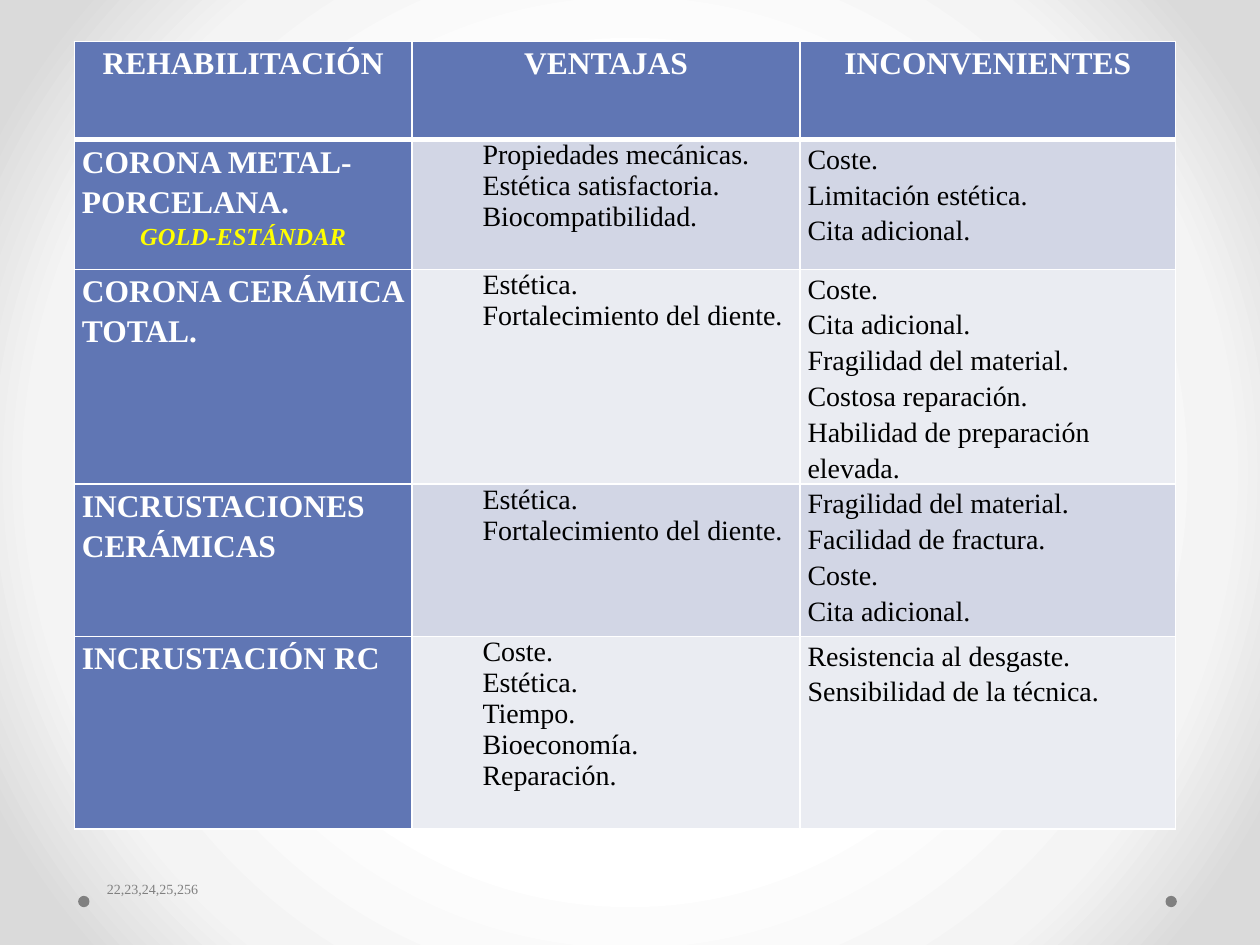
from lxml.etree import SubElement
from pptx import Presentation
from pptx.dml.color import RGBColor
from pptx.enum.shapes import MSO_SHAPE
from pptx.enum.text import PP_ALIGN
from pptx.oxml import parse_xml
from pptx.oxml.ns import nsdecls, qn
from pptx.util import Inches, Pt

FONT = "Times New Roman"
BLUE = RGBColor(0x60, 0x76, 0xB4)
BAND_DARK = RGBColor(0xD2, 0xD6, 0xE5)
BAND_LIGHT = RGBColor(0xEA, 0xEC, 0xF2)
WHITE = RGBColor(0xFF, 0xFF, 0xFF)
BLACK = RGBColor(0, 0, 0)
YELLOW = RGBColor(0xFF, 0xFF, 0)
GRAY = RGBColor(0x80, 0x80, 0x80)
BACKGROUND_STOPS = [(50, WHITE), (76, RGBColor(0xF4, 0xF4, 0xF4)),
                    (92, RGBColor(0xDA, 0xDA, 0xDA))]

WIDTH, HEIGHT = Inches(10), Inches(7.5)
COLUMN_SHARES = [2.68, 3.08, 2.98]
ROW_SHARES = [0.78, 1.03, 1.7, 1.21, 1.53]

HEADERS = ["REHABILITACIÓN", "VENTAJAS", "INCONVENIENTES"]
GOLD = "GOLD-ESTÁNDAR"
TREATMENTS = [
    (["CORONA METAL-PORCELANA.", GOLD],
     ["Propiedades mecánicas.", "Estética satisfactoria.", "Biocompatibilidad."],
     ["Coste.", "Limitación estética.", "Cita adicional."]),
    (["CORONA CERÁMICA TOTAL."],
     ["Estética.", "Fortalecimiento del diente."],
     ["Coste.", "Cita adicional.", "Fragilidad del material.",
      "Costosa reparación.", "Habilidad de preparación elevada."]),
    (["INCRUSTACIONES CERÁMICAS"],
     ["Estética.", "Fortalecimiento del diente."],
     ["Fragilidad del material.", "Facilidad de fractura.", "Coste.",
      "Cita adicional."]),
    (["INCRUSTACIÓN RC"],
     ["Coste.", "Estética.", "Tiempo.", "Bioeconomía.", "Reparación."],
     ["Resistencia al desgaste.", "Sensibilidad de la técnica."]),
]


def share_box(x, y, w, h):
    """Turn shares of the slide into lengths."""
    return int(WIDTH * x), int(HEIGHT * y), int(WIDTH * w), int(HEIGHT * h)


def add_run(p, text, size, color, bold=False, italic=False):
    r = p.add_run()
    r.text = text
    r.font.name, r.font.size = FONT, Pt(size)
    r.font.bold, r.font.italic = bold, italic
    r.font.color.rgb = color


def set_background(s):
    stops = "".join(f'<a:gs pos="{pos * 1000}"><a:srgbClr val="{color}"/></a:gs>'
                    for pos, color in BACKGROUND_STOPS)
    fill = s.background.fill
    fill.gradient()
    old = s.element.find(".//" + qn("a:gradFill"))
    old.getparent().replace(old, parse_xml(
        f'<a:gradFill {nsdecls("a")} rotWithShape="1"><a:gsLst>{stops}</a:gsLst>'
        '<a:path path="circle"><a:fillToRect l="50000" t="50000" r="50000" '
        'b="50000"/></a:path></a:gradFill>'))


def set_borders(cell, top, bottom):
    tcPr = cell._tc.get_or_add_tcPr()
    for side, width in (("L", 1), ("R", 1), ("T", top), ("B", bottom)):
        ln = SubElement(tcPr, qn(f"a:ln{side}"), w=str(Pt(width)))
        color = SubElement(SubElement(ln, qn("a:solidFill")), qn("a:srgbClr"))
        color.set("val", str(WHITE))


def fill_cell(cell, lines, row, column):
    # Borders and fill
    set_borders(cell, 3 if row == 1 else 1, 3 if row == 0 else 1)
    heading = row == 0 or column == 0
    cell.fill.solid()
    cell.fill.fore_color.rgb = BLUE if heading else (BAND_DARK if row % 2 else BAND_LIGHT)
    cell.margin_left = cell.margin_right = Inches(0.06)
    cell.margin_top = cell.margin_bottom = 0

    # One paragraph per line
    tf = cell.text_frame
    for i, line in enumerate(lines):
        p = tf.paragraphs[0] if i == 0 else tf.add_paragraph()
        if row and column == 1:
            p._p.get_or_add_pPr().set("marL", str(Inches(0.5)))
        else:
            p.line_spacing = 1.15
        if row == 0 or line == GOLD:
            p.alignment = PP_ALIGN.CENTER
        if line == GOLD:
            add_run(p, line, 14, YELLOW, bold=True, italic=True)
        elif heading:
            add_run(p, line, 18, WHITE, bold=True)
        else:
            add_run(p, line, 16, BLACK)


def add_comparison_table(s, box):
    rows = [[[header] for header in HEADERS], *TREATMENTS]
    table = s.shapes.add_table(len(rows), len(HEADERS), *box).table
    for column, share in zip(table.columns, COLUMN_SHARES):
        column.width = int(box[2] * share / sum(COLUMN_SHARES))
    for row, share in zip(table.rows, ROW_SHARES):
        row.height = int(box[3] * share / sum(ROW_SHARES))
    for i, row in enumerate(rows):
        for j, lines in enumerate(row):
            fill_cell(table.cell(i, j), lines, i, j)


def add_references(s, box):
    tf = s.shapes.add_textbox(*box).text_frame
    tf.word_wrap = True
    add_run(tf.paragraphs[0], "22,23,24,25,256", 8, GRAY)


def add_footer_dots(s, box):
    """Place a dot at each end of the box."""
    left, top, width, size = box
    for x in (left, left + width - size):
        dot = s.shapes.add_shape(MSO_SHAPE.OVAL, x, top, size, size)
        dot.shadow.inherit = False
        dot.fill.solid()
        dot.fill.fore_color.rgb = GRAY
        dot.line.fill.background()


def main():
    prs = Presentation()
    prs.slide_width, prs.slide_height = WIDTH, HEIGHT
    s = prs.slides.add_slide(prs.slide_layouts[6])
    set_background(s)
    add_footer_dots(s, share_box(0.062, 0.948, 0.872, 0.012))
    add_comparison_table(s, share_box(0.059, 0.044, 0.874, 0.833))
    add_references(s, share_box(0.075, 0.925, 0.866, 0.036))
    prs.save("out.pptx")


if __name__ == "__main__":
    main()
